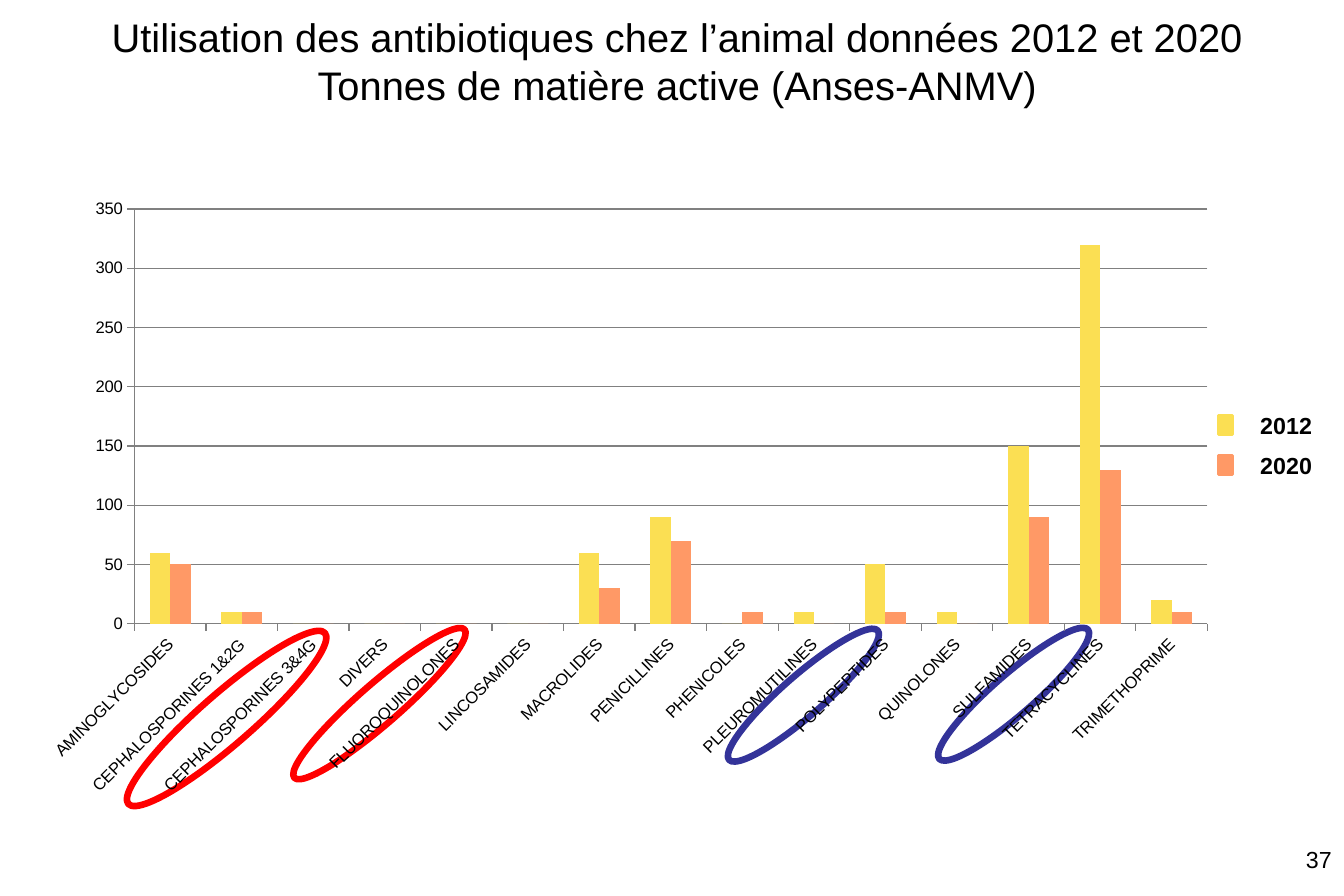
from dataclasses import dataclass

from lxml import etree
from pptx import Presentation
from pptx import util as u
from pptx.chart import data as cd
from pptx.dml.color import RGBColor
from pptx.enum import chart as ch, shapes, text
from pptx.oxml import ns

FONT = "Arial"
COLORS = {
    "text": "000000",
    "grid": "808080",
    "2012": "FBDF53",
    "2020": "FF9966",
    "red": "FF0000",
    "blue": "333399",
}


@dataclass
class Ring:
    """Tilted ellipse around an axis label, lengths in cm."""
    left: float
    top: float
    width: float
    height: float
    color: str


RINGS = [
    Ring(14.99, 14.35, 4.19, 0.86, "blue"),
    Ring(5.67, 14.53, 4.8, 0.86, "red"),
    Ring(2.05, 14.73, 5.54, 1.09, "red"),
    Ring(19.46, 14.33, 4.19, 0.86, "blue"),
]

# Tonnes of active substance, to the nearest ten: 2012, 2020
TONNES = {
    "AMINOGLYCOSIDES": (60, 50),
    "CEPHALOSPORINES 1&2G": (10, 10),
    "CEPHALOSPORINES 3&4G": (0, 0),
    "DIVERS": (0, 0),
    "FLUOROQUINOLONES": (0, 0),
    "LINCOSAMIDES": (0, 0),
    "MACROLIDES": (60, 30),
    "PENICILLINES": (90, 70),
    "PHENICOLES": (0, 10),
    "PLEUROMUTILINES": (10, 0),
    "POLYPEPTIDES": (50, 10),
    "QUINOLONES": (10, 0),
    "SULFAMIDES": (150, 90),
    "TETRACYCLINES": (320, 130),
    "TRIMETHOPRIME": (20, 10),
}
YEARS = ("2012", "2020")


def rgb(name: str) -> RGBColor:
    return RGBColor.from_string(COLORS[name])


def box(left: float, top: float, width: float, height: float) -> tuple:
    return u.Cm(left), u.Cm(top), u.Cm(width), u.Cm(height)


def style_font(font, size: float, bold: bool = False) -> None:
    font.name, font.size, font.bold = FONT, u.Pt(size), bold
    font.color.rgb = rgb("text")


def write(tf, words: str, size: float, align, bold: bool = False) -> None:
    p = tf.paragraphs[0]
    p.alignment = align
    r = p.add_run()
    r.text = words
    style_font(r.font, size, bold)


def add_label(s, place: tuple, words: str, align, bold: bool, wrap: bool) -> None:
    tf = s.shapes.add_textbox(*place).text_frame
    tf.word_wrap = wrap
    if not wrap:
        tf.auto_size = text.MSO_AUTO_SIZE.SHAPE_TO_FIT_TEXT
    write(tf, words, 14, align, bold)


def add_ring(s, ring: Ring) -> None:
    sp = s.shapes.add_shape(
        shapes.MSO_SHAPE.OVAL, *box(ring.left, ring.top, ring.width, ring.height))
    sp.rotation = 319
    sp.shadow.inherit = False
    sp.fill.background()
    sp.line.color.rgb = rgb(ring.color)
    sp.line.width = u.Pt(4)


def add_legend_entry(s, year: str, top: float) -> None:
    sp = s.shapes.add_shape(shapes.MSO_SHAPE.RECTANGLE, *box(25.91, top + 0.21, 0.3, 0.41))
    sp.shadow.inherit = False
    sp.fill.solid()
    sp.fill.fore_color.rgb = rgb(year)
    sp.line.color.rgb = rgb(year)
    sp.line.width = u.Pt(2)
    add_label(s, box(26.55, top, 1.63, 0.86), year, text.PP_ALIGN.LEFT, True, False)


def set_plot_layout(chart, x: float, y: float, w: float, h: float) -> None:
    plot_area = chart.element.find(".//" + ns.qn("c:plotArea"))
    for old in plot_area.findall(ns.qn("c:layout")):
        plot_area.remove(old)
    layout = etree.Element(ns.qn("c:layout"))
    manual = etree.SubElement(layout, ns.qn("c:manualLayout"))
    settings = {"layoutTarget": "inner", "xMode": "edge", "yMode": "edge",
                "x": x, "y": y, "w": w, "h": h}
    for tag, val in settings.items():
        etree.SubElement(manual, ns.qn("c:" + tag)).set("val", str(val))
    plot_area.insert(0, layout)


def clear_background(chart) -> None:
    sp_pr = etree.Element(ns.qn("c:spPr"))
    etree.SubElement(sp_pr, ns.qn("a:noFill"))
    line = etree.SubElement(sp_pr, ns.qn("a:ln"))
    etree.SubElement(line, ns.qn("a:noFill"))
    chart.element.find(ns.qn("c:chart")).addnext(sp_pr)


def add_usage_chart(s) -> None:
    data = cd.CategoryChartData()
    data.categories = list(TONNES)
    for year, values in zip(YEARS, zip(*TONNES.values())):
        data.add_series(year, values)
    chart = s.shapes.add_chart(
        ch.XL_CHART_TYPE.COLUMN_CLUSTERED, *box(0.55, 4.05, 25.64, 13.16), data).chart
    chart.has_legend = chart.has_title = False
    style_font(chart.font, 10)
    set_plot_layout(chart, 0.09, 0.03, 0.89, 0.67)
    clear_background(chart)

    # Columns
    plot = chart.plots[0]
    plot.gap_width, plot.overlap = 150, 0
    plot.vary_by_categories = False
    for series in plot.series:
        series.format.fill.solid()
        series.format.fill.fore_color.rgb = rgb(series.name)
        series.invert_if_negative = False

    # Axes
    values, cats = chart.value_axis, chart.category_axis
    values.minimum_scale, values.maximum_scale, values.major_unit = 0, 350, 50
    values.has_major_gridlines = True
    for axis in (values, cats):
        axis.major_tick_mark = ch.XL_TICK_MARK.OUTSIDE
        style_font(axis.tick_labels.font, 10)
    for part in (values, cats, values.major_gridlines):
        part.format.line.color.rgb = rgb("grid")
        part.format.line.width = u.Pt(0.75)
    labels = cats._element.find(ns.qn("c:txPr")).find(ns.qn("a:bodyPr"))
    labels.set("rot", "-2700000")
    labels.set("vert", "horz")


def main() -> None:
    prs = Presentation()
    prs.slide_width, prs.slide_height = u.Cm(28.58), u.Cm(19.05)
    s = prs.slides.add_slide(prs.slide_layouts[5])

    # Title
    title = s.shapes.title
    title.left, title.top, title.width, title.height = box(1.7, 0.12, 25.4, 2.34)
    tf = title.text_frame
    tf.auto_size = text.MSO_AUTO_SIZE.NONE
    tf.vertical_anchor = text.MSO_ANCHOR.MIDDLE
    write(tf, "Utilisation des antibiotiques chez l’animal données 2012 et 2020 "
          "Tonnes de matière active (Anses-ANMV)", 24, text.PP_ALIGN.CENTER)

    # Rings behind the axis labels
    for ring in RINGS:
        add_ring(s, ring)

    # Slide number
    add_label(s, box(22.63, 17.84, 5.94, 1.27), "37", text.PP_ALIGN.RIGHT, False, True)

    # Legend
    for i, year in enumerate(YEARS):
        add_legend_entry(s, year, 8.62 + 0.85 * i)

    # Chart
    add_usage_chart(s)
    prs.save("out.pptx")


if __name__ == "__main__":
    main()
